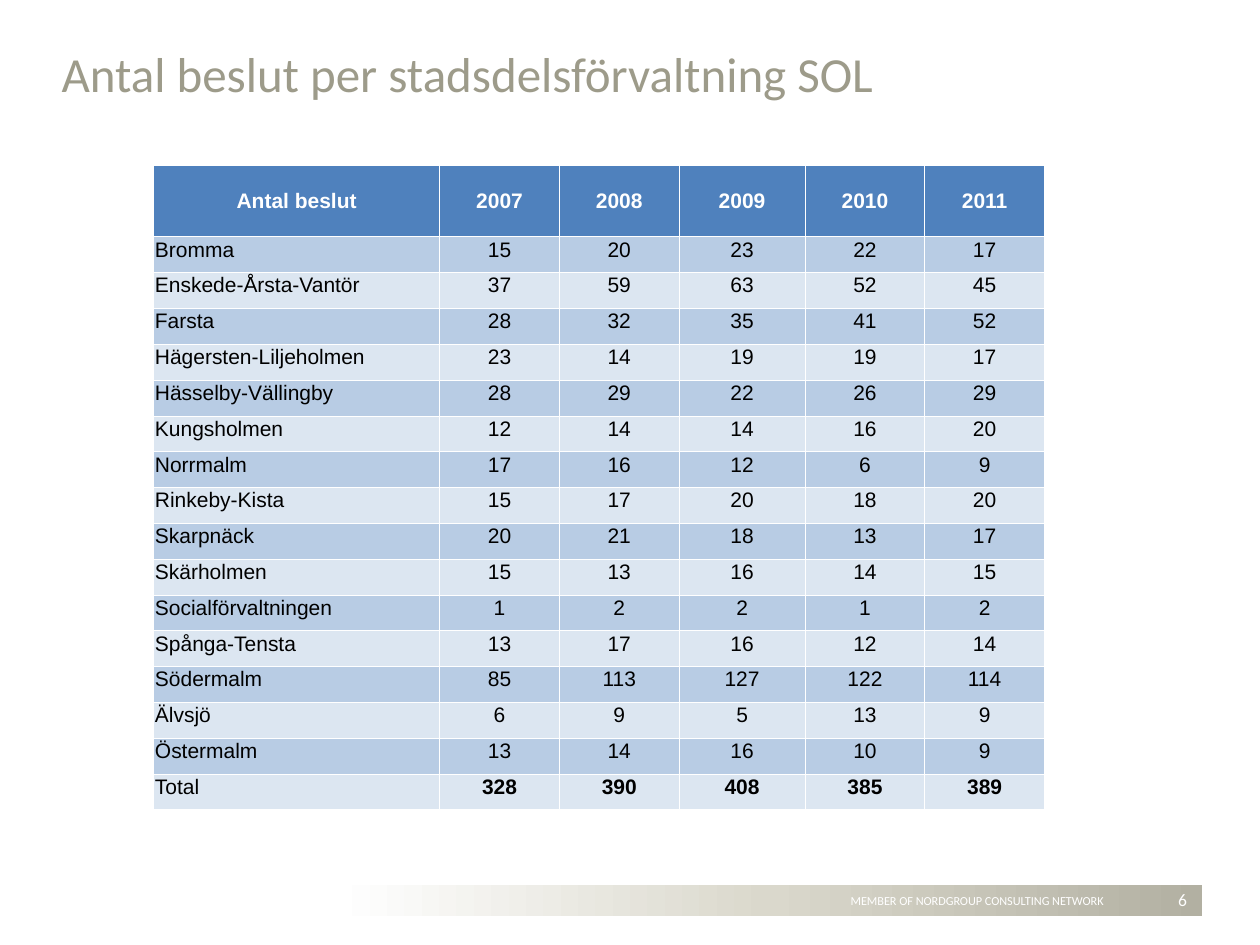
from dataclasses import dataclass

from lxml.etree import SubElement
from pptx import Presentation
from pptx.dml.color import RGBColor
from pptx.enum.shapes import MSO_SHAPE as Shape
from pptx.enum.text import MSO_ANCHOR as Anchor, PP_ALIGN as Align
from pptx.oxml.ns import qn
from pptx.util import Inches, Pt


@dataclass(frozen=True)
class Theme:
    heading_font: str = "Calibri"
    table_font: str = "Arial"
    title_size: float = 28
    table_size: float = 12
    number_size: float = 10
    footer_size: float = 7
    title: str = "9D9B8A"
    white: str = "FFFFFF"
    black: str = "000000"
    header: str = "4F81BD"
    bands: tuple = ("B8CCE4", "DCE6F1")
    gradient: tuple = ((0, "B2B0A2"), (50, "DAD8CC"), (100, "FFFFFF"))
    border_width: float = 0.5


THEME = Theme()

YEARS = ["2007", "2008", "2009", "2010", "2011"]
DECISIONS = [
    ("Bromma", 15, 20, 23, 22, 17),
    ("Enskede-Årsta-Vantör", 37, 59, 63, 52, 45),
    ("Farsta", 28, 32, 35, 41, 52),
    ("Hägersten-Liljeholmen", 23, 14, 19, 19, 17),
    ("Hässelby-Vällingby", 28, 29, 22, 26, 29),
    ("Kungsholmen", 12, 14, 14, 16, 20),
    ("Norrmalm", 17, 16, 12, 6, 9),
    ("Rinkeby-Kista", 15, 17, 20, 18, 20),
    ("Skarpnäck", 20, 21, 18, 13, 17),
    ("Skärholmen", 15, 13, 16, 14, 15),
    ("Socialförvaltningen", 1, 2, 2, 1, 2),
    ("Spånga-Tensta", 13, 17, 16, 12, 14),
    ("Södermalm", 85, 113, 127, 122, 114),
    ("Älvsjö", 6, 9, 5, 13, 9),
    ("Östermalm", 13, 14, 16, 10, 9),
    ("Total", 328, 390, 408, 385, 389),
]
COLUMN_WIDTHS = [2.27, 0.95, 0.95, 1, 0.95, 0.95]
HEADER_HEIGHT = 0.57


def write_text(frame, text, *, size, color, font=THEME.heading_font,
               bold=False, align=Align.LEFT):
    paragraph = frame.paragraphs[0]
    paragraph.alignment = align
    run = paragraph.add_run()
    run.text = text
    run.font.name = font
    run.font.size = Pt(size)
    run.font.bold = bold
    run.font.color.rgb = RGBColor.from_string(color)


def add_text(slide, box, text, *, anchor=Anchor.MIDDLE, left_inset=0.1,
             right_inset=0.1, **text_format):
    frame = slide.shapes.add_textbox(*map(Inches, box)).text_frame
    frame.word_wrap = True
    frame.vertical_anchor = anchor
    frame.margin_left = Inches(left_inset)
    frame.margin_right = Inches(right_inset)
    write_text(frame, text, **text_format)


def add_footer(slide, box):
    left, top, width, height = box

    # Band fading out to the left
    band = slide.shapes.add_shape(Shape.RECTANGLE, *map(Inches, box))
    band.shadow.inherit = False
    band.line.fill.background()
    band.fill.gradient()
    band.fill.gradient_angle = 180
    stops = band.element.find(".//" + qn("a:gsLst"))
    for stop in list(stops):
        stops.remove(stop)
    for position, color in THEME.gradient:
        stop = SubElement(stops, qn("a:gs"), pos=str(position * 1000))
        SubElement(stop, qn("a:srgbClr"), val=color)

    # Network name and slide number
    add_text(slide, (left + 3.99, top + 0.02, 2.61, 0.22),
             "MEMBER OF NORDGROUP CONSULTING NETWORK",
             left_inset=0, right_inset=0.4, size=THEME.footer_size,
             color=THEME.white, align=Align.CENTER)
    add_text(slide, (left + width - 0.48, top - 0.01, 0.46, height), "6",
             size=THEME.number_size, color=THEME.white, align=Align.RIGHT)


def fill_cell(cell, text, *, fill, anchor=Anchor.TOP, **text_format):
    cell.margin_left = cell.margin_right = cell.margin_top = Inches(0.01)
    cell.margin_bottom = 0
    cell.vertical_anchor = anchor
    properties = cell._tc.get_or_add_tcPr()
    for side in ("lnL", "lnR", "lnT", "lnB"):
        line = SubElement(properties, qn(f"a:{side}"),
                          w=str(Pt(THEME.border_width)))
        solid = SubElement(line, qn("a:solidFill"))
        SubElement(solid, qn("a:srgbClr"), val=THEME.white)
    cell.fill.solid()
    cell.fill.fore_color.rgb = RGBColor.from_string(fill)
    write_text(cell.text_frame, text, font=THEME.table_font,
               size=THEME.table_size, **text_format)


def add_decision_table(slide, box):
    table = slide.shapes.add_table(len(DECISIONS) + 1, len(COLUMN_WIDTHS),
                                   *map(Inches, box)).table
    for column, width in zip(table.columns, COLUMN_WIDTHS):
        column.width = Inches(width)
    body_height = (box[3] - HEADER_HEIGHT) / len(DECISIONS)
    for index, row in enumerate(table.rows):
        row.height = Inches(body_height if index else HEADER_HEIGHT)

    # Header row
    for column, text in enumerate(["Antal beslut", *YEARS]):
        fill_cell(table.cell(0, column), text, fill=THEME.header,
                  anchor=Anchor.MIDDLE, color=THEME.white, bold=True,
                  align=Align.CENTER)

    # Districts and total
    for index, values in enumerate(DECISIONS):
        for column, value in enumerate(values):
            fill_cell(table.cell(index + 1, column), str(value),
                      fill=THEME.bands[index % 2], color=THEME.black,
                      bold=values[0] == "Total" and column > 0,
                      align=Align.CENTER if column else Align.LEFT)


def main():
    presentation = Presentation()
    presentation.slide_width = Inches(10)
    presentation.slide_height = Inches(7.5)
    slide = presentation.slides.add_slide(presentation.slide_layouts[6])

    add_footer(slide, (2.66, 7.02, 6.88, 0.25))
    add_text(slide, (0.39, 0.07, 8.29, 0.79),
             "Antal beslut per stadsdelsförvaltning SOL",
             anchor=Anchor.BOTTOM, size=THEME.title_size, color=THEME.title)
    add_decision_table(slide, (1.22, 1.31, 7.09, 5.12))

    presentation.save("out.pptx")


if __name__ == "__main__":
    main()
